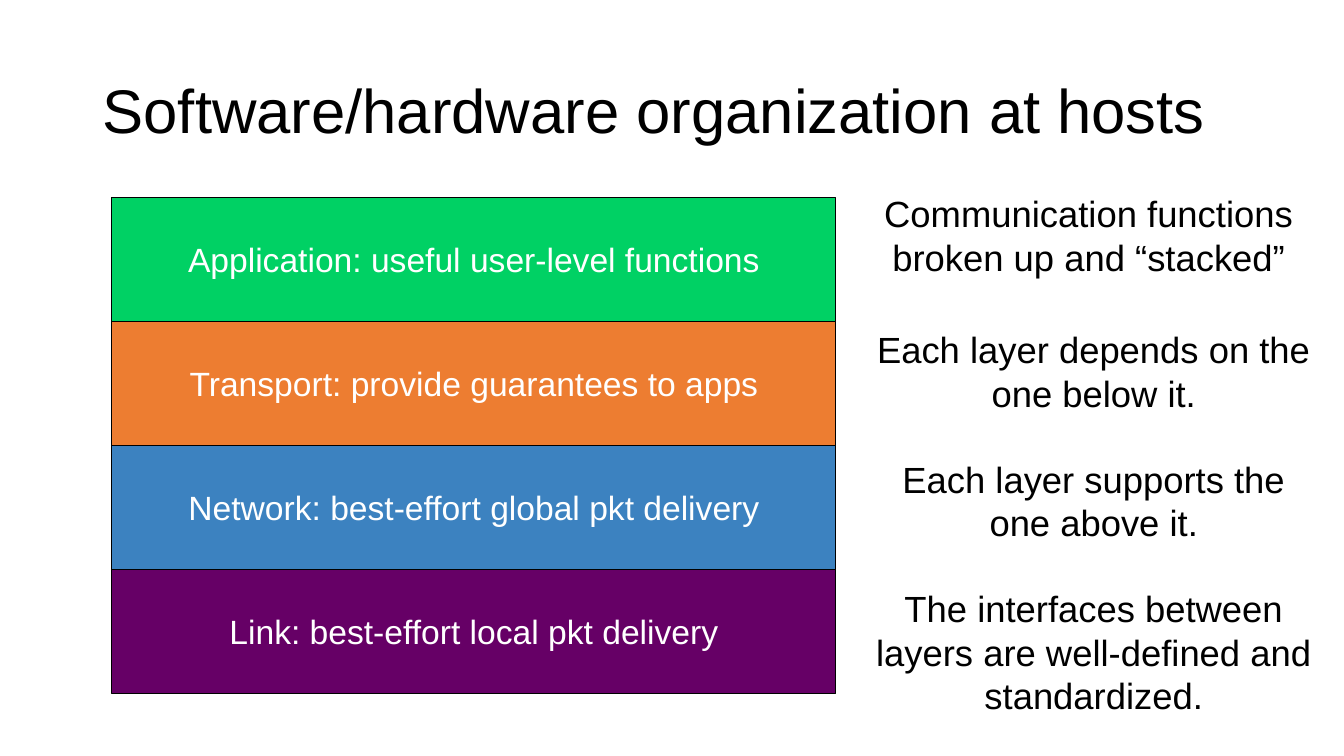
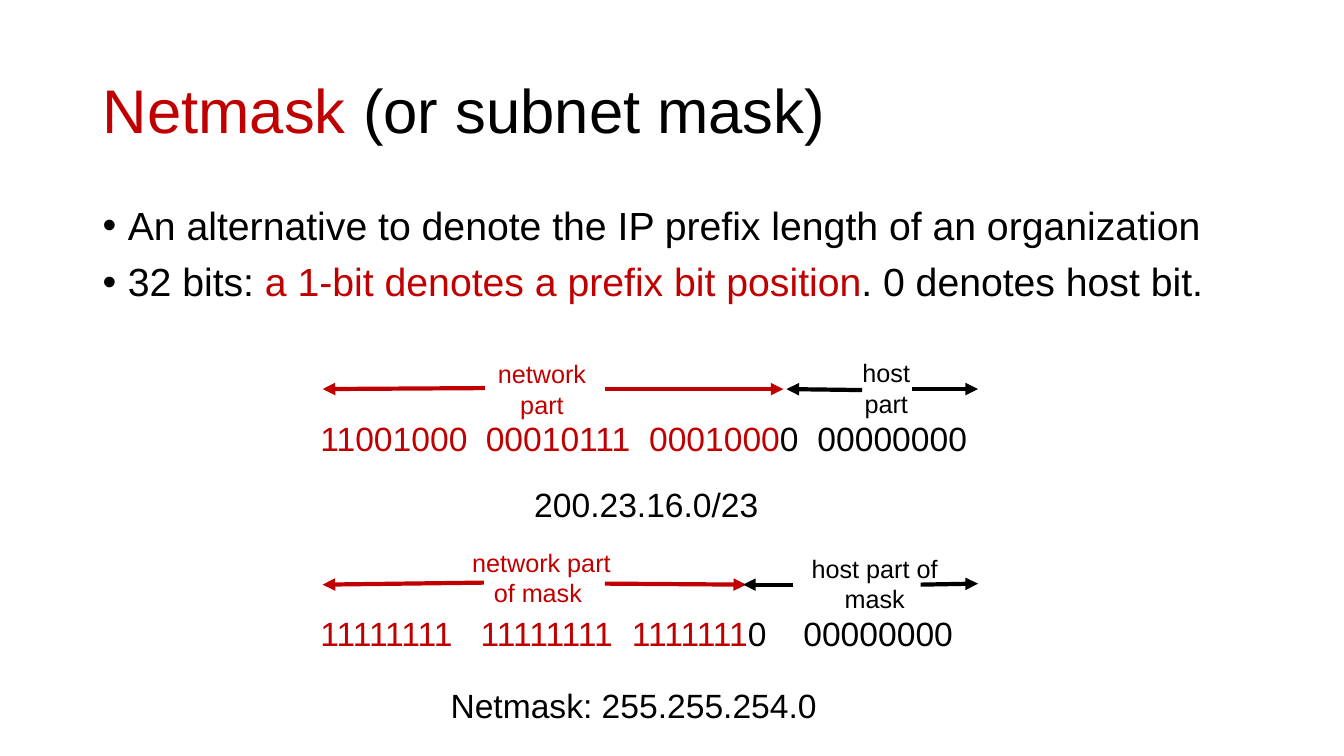
import pptx
import pptx.dml.color
import pptx.enum.shapes
import pptx.enum.text
import pptx.oxml.ns
import pptx.util
from lxml import etree

Inches = pptx.util.Inches
Pt = pptx.util.Pt
RGBColor = pptx.dml.color.RGBColor
qn = pptx.oxml.ns.qn
ALIGN = pptx.enum.text.PP_ALIGN
ANCHOR = pptx.enum.text.MSO_ANCHOR
SHAPES = pptx.enum.shapes.MSO_SHAPE
CONNECTORS = pptx.enum.shapes.MSO_CONNECTOR

COLORS = {
    "black": "000000",
    "white": "FFFFFF",
    "red": "C00000",
    "application": "00D164",
    "transport": "ED7D31",
    "network": "3C82C0",
    "link": "660066",
}
FONT = "Arial"
TITLE = {"size": 44, "anchor": ANCHOR.MIDDLE, "line_spacing": 0.9}


def write(box, paragraphs, size, align=ALIGN.LEFT, anchor=ANCHOR.TOP,
          line_spacing=1.0, gap=0, wrap=True):
    frame = box.text_frame
    frame.word_wrap = wrap
    frame.vertical_anchor = anchor
    for index, runs in enumerate(paragraphs):
        para = frame.paragraphs[0] if index == 0 else frame.add_paragraph()
        para.alignment = align
        para.line_spacing = line_spacing
        para.space_before = Pt(gap if index else 0)
        for text, color in runs:
            span = para.add_run()
            span.text = text
            span.font.name = FONT
            span.font.size = Pt(size)
            span.font.color.rgb = RGBColor.from_string(COLORS[color])
    return frame


def add_text(page, place, paragraphs, size, **style):
    box = page.shapes.add_textbox(*[Inches(length) for length in place])
    return write(box, paragraphs, size, **style)


deck = pptx.Presentation()
deck.slide_width = Inches(13.33)
deck.slide_height = Inches(7.5)
blank = deck.slide_layouts[6]

titles = [
    [("Software/hardware organization at hosts", "black")],
    [("Netmask ", "red"), ("(or subnet mask)", "black")],
]
for title in titles:
    page = deck.slides.add_slide(blank)
    add_text(page, (0.92, 0.4, 11.96, 1.45), [title], **TITLE)
layers_page, netmask_page = deck.slides

layers = [
    ("application", "Application: useful user-level functions"),
    ("transport", "Transport: provide guarantees to apps"),
    ("network", "Network: best-effort global pkt delivery"),
    ("link", "Link: best-effort local pkt delivery"),
]
layer_top, layer_height = 1.96, 1.23
for index, (color, label) in enumerate(layers):
    box = layers_page.shapes.add_shape(
        SHAPES.RECTANGLE, Inches(1.11), Inches(layer_top + index * layer_height),
        Inches(7.18), Inches(layer_height))
    box.shadow.inherit = False
    box.fill.solid()
    box.fill.fore_color.rgb = RGBColor.from_string(COLORS[color])
    box.line.color.rgb = RGBColor.from_string(COLORS["black"])
    box.line.width = Pt(0.75)
    write(box, [[(label, "white")]], 24, align=ALIGN.CENTER, anchor=ANCHOR.MIDDLE)

add_text(layers_page, (8.46, 1.85, 4.68, 0.98),
         [[("Communication functions broken up and “stacked”", "black")]],
         26, align=ALIGN.CENTER)
remarks = [
    "Each layer depends on the one below it.",
    "Each layer supports the one above it.",
    "The interfaces between layers are well-defined and standardized.",
]
add_text(layers_page, (8.51, 3.2, 4.68, 4.04),
         [[(remark, "black")] for remark in remarks],
         26, align=ALIGN.CENTER, gap=30)

bullets = add_text(
    netmask_page, (0.92, 2, 11.5, 1.2),
    [[("An alternative to denote the IP prefix length of an organization", "black")],
     [("32 bits: ", "black"), ("a 1-bit denotes a prefix bit position", "red"),
      (". 0 denotes host bit.", "black")]],
    28, line_spacing=0.9, gap=10)
for para in bullets.paragraphs:
    properties = para._p.get_or_add_pPr()
    properties.set("marL", str(Inches(0.25)))
    properties.set("indent", str(-Inches(0.25)))
    etree.SubElement(properties, qn("a:buFont"), typeface=FONT)
    etree.SubElement(properties, qn("a:buChar"), char="•")

bit_rows = [
    (4.1, "11001000\t00010111\t0001000", "0\t00000000", (1.64, 3.26, 4.93)),
    (6.03, "11111111\t11111111\t1111111", "0\t00000000", (1.59, 3.09, 4.79)),
]
for top, prefix_bits, host_bits, stops in bit_rows:
    row = add_text(netmask_page, (3.08, top, 6.9, 0.5),
                   [[(prefix_bits, "red"), (host_bits, "black")]], 24)
    tabs = etree.SubElement(row.paragraphs[0]._p.get_or_add_pPr(), qn("a:tabLst"))
    for stop in stops:
        etree.SubElement(tabs, qn("a:tab"), pos=str(Inches(stop)), algn="l")

part_labels = [
    ((4.83, 3.51, 1.09, 0.71), ["network", "part"], "red"),
    ((8.45, 3.5, 0.68, 0.71), ["host", "part"], "black"),
    ((4.57, 5.38, 1.6, 0.71), ["network part of mask "], "red"),
    ((7.79, 5.44, 1.77, 0.71), ["host part of mask"], "black"),
]
for place, lines, color in part_labels:
    add_text(netmask_page, place, [[(line, color)] for line in lines], 18,
             align=ALIGN.CENTER, wrap=len(lines) == 1)

captions = [
    ((5.2, 4.75, 2.45, 0.51), "200.23.16.0/23"),
    ((4.37, 6.75, 3.87, 0.5), "Netmask: 255.255.254.0"),
]
for place, caption in captions:
    add_text(netmask_page, place, [[(caption, "black")]], 24, wrap=False)

arrows = [
    (6, 3.86, 7.77, 3.86, "red"),
    (4.81, 3.85, 3.2, 3.86, "red"),
    (8.55, 3.87, 7.8, 3.86, "black"),
    (9.05, 3.86, 9.7, 3.86, "black"),
    (6, 5.79, 7.4, 5.8, "red"),
    (4.8, 5.78, 3.2, 5.8, "red"),
    (7.87, 5.8, 7.37, 5.8, "black"),
    (9.13, 5.8, 9.7, 5.79, "black"),
]
for *ends, color in arrows:
    arrow = netmask_page.shapes.add_connector(
        CONNECTORS.STRAIGHT, *[Inches(length) for length in ends])
    arrow.line.color.rgb = RGBColor.from_string(COLORS[color])
    arrow.line.width = Pt(3)
    properties = arrow._element.spPr
    etree.SubElement(properties.find(qn("a:ln")), qn("a:tailEnd"), type="triangle")
    etree.SubElement(properties, qn("a:effectLst"))

deck.save("out.pptx")
